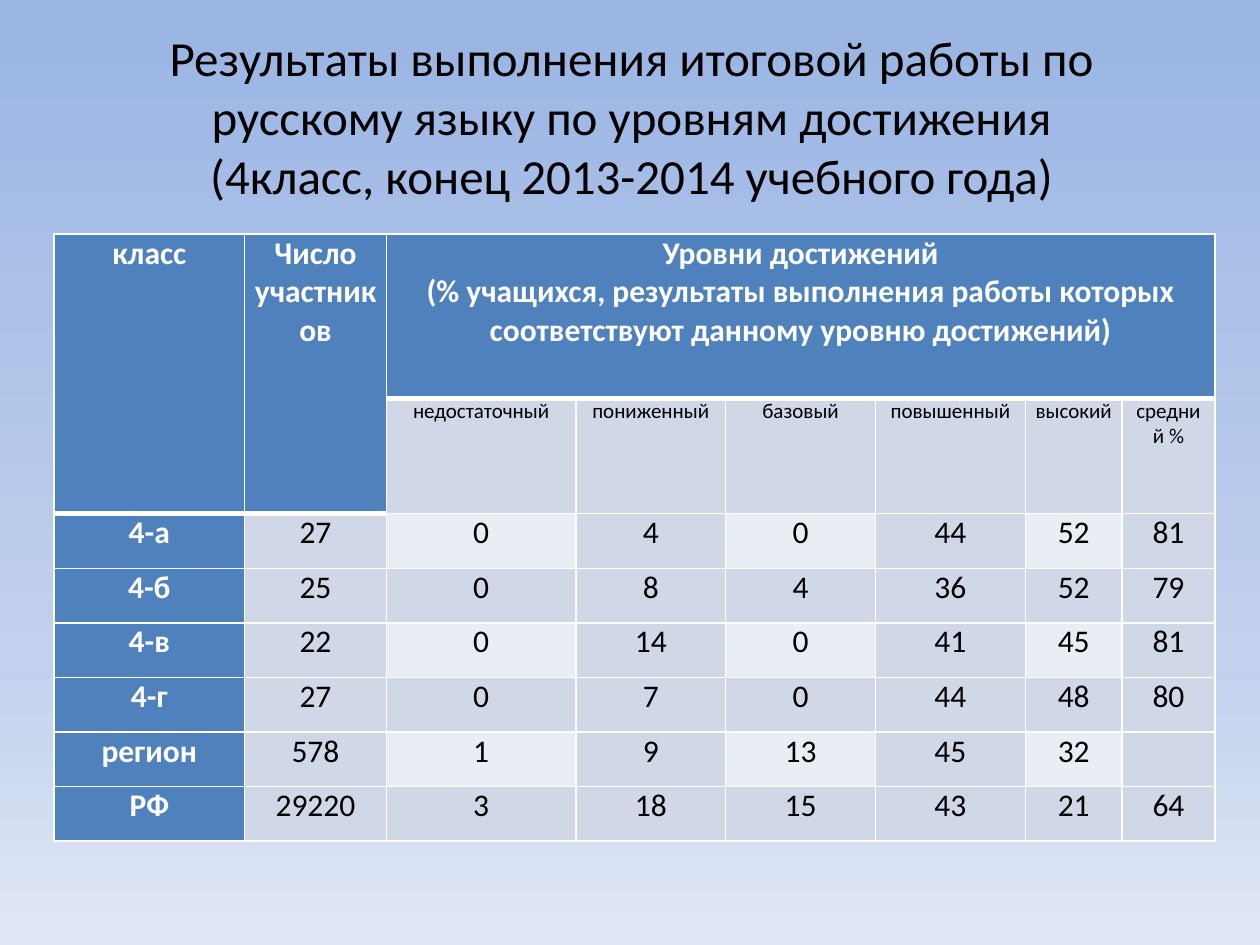
from copy import deepcopy
from dataclasses import dataclass

from lxml.etree import SubElement
from pptx import Presentation
from pptx.dml.color import RGBColor as RGB
from pptx.enum.text import MSO_ANCHOR as Anchor, PP_ALIGN as Align
from pptx.oxml.ns import qn
from pptx.util import Cm, Pt


@dataclass(frozen=True)
class Theme:
    font: str = "Calibri"
    title_size: float = 28
    body_size: float = 18
    label_size: float = 12
    dark: str = "000000"
    light: str = "FFFFFF"
    accent: str = "4F81BD"
    band: str = "D0D8E8"
    pale: str = "E9EDF4"
    sky: tuple = ((0, "9AB5E4"), (0.7, "C2D1ED"), (1, "E1E8F5"))
    line: float = 1
    header_line: float = 3


THEME = Theme()

TITLE = (
    "Результаты выполнения итоговой работы по русскому языку по уровням достижения",
    "(4класс, конец 2013-2014 учебного года)",
)
HEADERS = (
    ("класс",),
    ("Число", "участников"),
    (
        "Уровни достижений",
        "(% учащихся, результаты выполнения работы которых "
        "соответствуют данному уровню достижений)",
    ),
)
LEVELS = ("недостаточный", "пониженный", "базовый", "повышенный", "высокий", "средний %")
RESULTS = (
    ("4-а", 27, 0, 4, 0, 44, 52, 81),
    ("4-б", 25, 0, 8, 4, 36, 52, 79),
    ("4-в", 22, 0, 14, 0, 41, 45, 81),
    ("4-г", 27, 0, 7, 0, 44, 48, 80),
    ("регион", 578, 1, 9, 13, 45, 32, ""),
    ("РФ", 29220, 3, 18, 15, 43, 21, 64),
)
COL_WIDTHS = (3.84, 2.86, 3.82, 3.02, 3.02, 3.02, 1.95, 1.87)
ROW_HEIGHTS = (3.31, 2.32) + (1.1,) * len(RESULTS)


def apply_format(obj, values):
    for name, value in values.items():
        setattr(obj, name, value)


def format_font(font, size, color, bold=False):
    apply_format(font, {"name": THEME.font, "size": Pt(size), "bold": bold})
    font.color.rgb = RGB.from_string(color)


def set_background(slide):
    fill = slide.background.fill
    fill.gradient()
    fill.gradient_angle = 270
    stops = slide.background._element.find(".//" + qn("a:gsLst"))
    stops.append(deepcopy(stops[-1]))
    for stop, (position, color) in zip(fill.gradient_stops, THEME.sky):
        stop.position = position
        stop.color.rgb = RGB.from_string(color)


def set_title(slide):
    sp = slide.shapes.title
    apply_format(sp, {"left": Cm(1.3), "top": Cm(1.52), "width": Cm(22.86), "height": Cm(3.18)})
    tf = sp.text_frame
    apply_format(tf, {"word_wrap": True, "vertical_anchor": Anchor.MIDDLE, "margin_bottom": Cm(1.68)})
    p = tf.paragraphs[0]
    p.alignment = Align.CENTER
    for i, line in enumerate(TITLE):
        if i:
            p.add_line_break()
        r = p.add_run()
        r.text = line
        format_font(r.font, THEME.title_size, THEME.dark)


def set_borders(cell, top, bottom):
    widths = {"lnL": THEME.line, "lnR": THEME.line, "lnT": top, "lnB": bottom}
    tc_pr = cell._tc.get_or_add_tcPr()
    for tag, width in widths.items():
        ln = SubElement(tc_pr, qn("a:" + tag), w=str(Pt(width)))
        fill = SubElement(ln, qn("a:solidFill"))
        SubElement(fill, qn("a:srgbClr"), val=THEME.light)


def style_cell(cell, row, col):
    header_rows = 2 if col < 2 else 1
    apply_format(cell, {
        "margin_left": Cm(0.18), "margin_right": Cm(0.18),
        "margin_top": 0, "margin_bottom": 0,
    })
    set_borders(
        cell,
        THEME.header_line if row == header_rows else THEME.line,
        THEME.header_line if row == header_rows - 1 else THEME.line,
    )
    strong = row < header_rows or col == 0
    is_pale = row > 1 and row % 2 == 0 and col in (2, 4, 6)
    color = THEME.accent if strong else THEME.pale if is_pale else THEME.band
    cell.fill.solid()
    cell.fill.fore_color.rgb = RGB.from_string(color)
    size = THEME.label_size if row == 1 and not strong else THEME.body_size
    for p in cell.text_frame.paragraphs:
        p.alignment = Align.CENTER
        format_font(p.font, size, THEME.light if strong else THEME.dark, strong)
        for r in p.runs:
            format_font(r.font, size, THEME.light if strong else THEME.dark, strong)


def add_results_table(slide):
    frame = slide.shapes.add_table(
        len(ROW_HEIGHTS), len(COL_WIDTHS), Cm(1.09), Cm(4.72),
        Cm(sum(COL_WIDTHS)), Cm(sum(ROW_HEIGHTS)),
    )
    table = frame.table
    for column, width in zip(table.columns, COL_WIDTHS):
        column.width = Cm(width)
    for row, height in zip(table.rows, ROW_HEIGHTS):
        row.height = Cm(height)

    for col, lines in enumerate(HEADERS):
        table.cell(0, col).text = "\n".join(lines)
    for row, values in enumerate((("", "") + LEVELS,) + RESULTS, start=1):
        for col, value in enumerate(values):
            table.cell(row, col).text = str(value)

    for row in range(len(ROW_HEIGHTS)):
        for col in range(len(COL_WIDTHS)):
            style_cell(table.cell(row, col), row, col)
    for col in (0, 1):
        table.cell(0, col).merge(table.cell(1, col))
    table.cell(0, 2).merge(table.cell(0, len(COL_WIDTHS) - 1))


def main():
    prs = Presentation()
    apply_format(prs, {"slide_width": Cm(25.4), "slide_height": Cm(19.05)})
    slide = prs.slides.add_slide(prs.slide_layouts[5])
    set_background(slide)
    set_title(slide)
    add_results_table(slide)
    prs.save("out.pptx")


if __name__ == "__main__":
    main()
